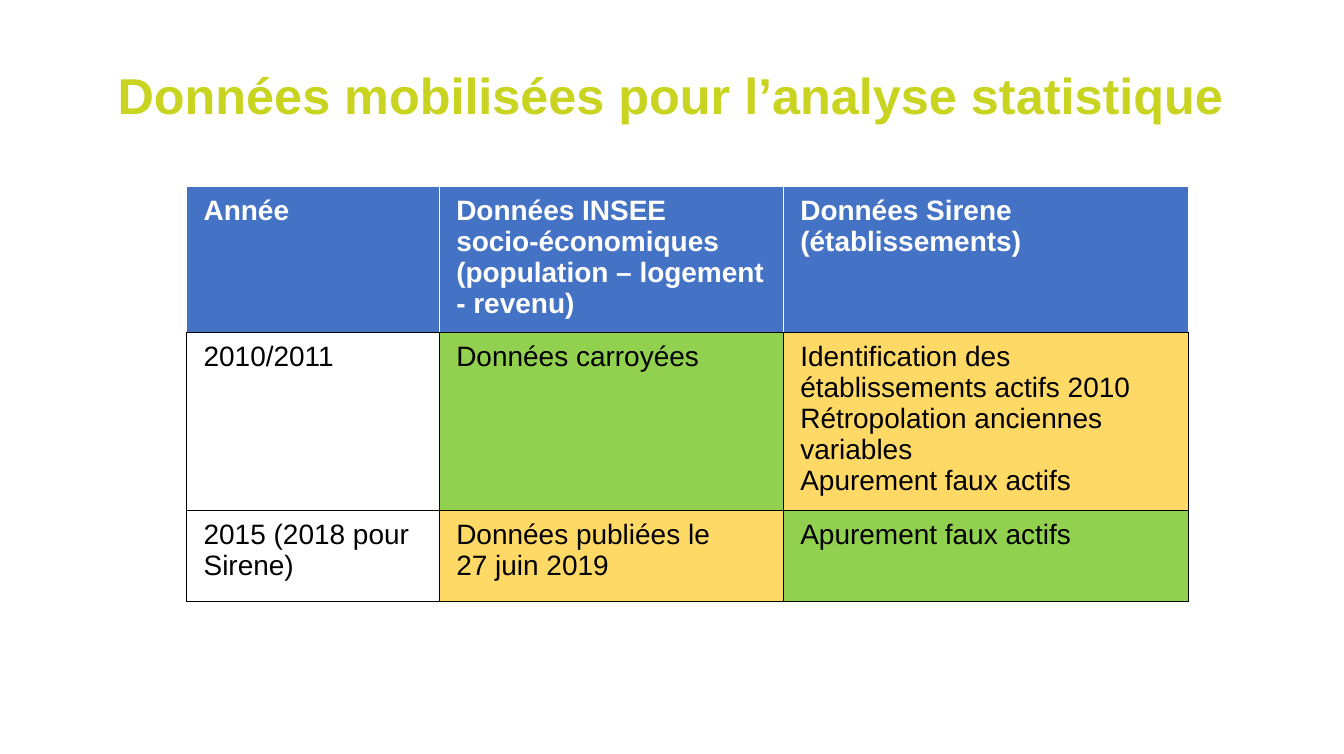
from typing import NamedTuple

from lxml import etree
from pptx import Presentation
from pptx import util as u
from pptx.dml.color import RGBColor
from pptx.enum import text
from pptx.oxml.ns import qn

LIME = RGBColor(0xC8, 0xD4, 0x1F)
BLUE = RGBColor(0x44, 0x72, 0xC4)
GREEN = RGBColor(0x92, 0xD0, 0x50)
YELLOW = RGBColor(0xFF, 0xD9, 0x66)
WHITE = RGBColor(0xFF, 0xFF, 0xFF)
BLACK = RGBColor(0, 0, 0)

FONT = "Arial"
SLIDE_WIDTH, SLIDE_HEIGHT = u.Inches(20), u.Inches(11.22)
TABLE_LEFT, TABLE_TOP = u.Inches(2.78), u.Inches(2.77)
COLUMN_WIDTHS = [u.Inches(width) for width in (3.76, 5.12, 6.03)]
ROW_HEIGHTS = [u.Inches(height) for height in (2.17, 2.65, 1.36)]


class Entry(NamedTuple):
    wording: str
    fill: RGBColor


ROWS = [
    [
        Entry("Année", BLUE),
        Entry("Données INSEE\nsocio-économiques\n(population – logement - revenu)", BLUE),
        Entry("Données Sirene (établissements)", BLUE),
    ],
    [
        Entry("2010/2011", WHITE),
        Entry("Données carroyées", GREEN),
        Entry(
            "Identification des établissements actifs 2010\n"
            "Rétropolation anciennes variables\n"
            "Apurement faux actifs",
            YELLOW,
        ),
    ],
    [
        Entry("2015 (2018 pour Sirene)", WHITE),
        Entry("Données publiées le\n27 juin 2019", YELLOW),
        Entry("Apurement faux actifs", GREEN),
    ],
]


def style_font(paragraph, size: float, color: RGBColor, bold: bool) -> None:
    font = paragraph.font
    font.name, font.size, font.bold = FONT, u.Pt(size), bold
    font.color.rgb = color


def add_border(cell, side: str, color: RGBColor) -> None:
    properties = cell._tc.get_or_add_tcPr()
    line = etree.SubElement(properties, qn(f"a:ln{side}"), w=str(u.Pt(1)))
    solid = etree.SubElement(line, qn("a:solidFill"))
    etree.SubElement(solid, qn("a:srgbClr"), val=str(color))


def fill_cell(cell, entry: Entry, is_header: bool) -> None:
    cell.margin_left = cell.margin_right = u.Inches(0.25)
    cell.margin_top = cell.margin_bottom = u.Inches(0.13)
    for side in "LRTB":
        add_border(cell, side, WHITE if is_header and side != "B" else BLACK)
    cell.fill.solid()
    cell.fill.fore_color.rgb = entry.fill
    cell.text_frame.text = entry.wording
    for paragraph in cell.text_frame.paragraphs:
        style_font(paragraph, 30, WHITE if is_header else BLACK, is_header)


def add_title(slide, wording: str) -> None:
    title = slide.shapes.title
    title.left, title.top = u.Inches(1.6), u.Inches(0.37)
    title.width, title.height = u.Inches(17.25), u.Inches(2.17)
    frame = title.text_frame
    frame.text = wording
    frame.word_wrap = True
    frame.auto_size = text.MSO_AUTO_SIZE.NONE
    frame.vertical_anchor = text.MSO_ANCHOR.MIDDLE
    frame.margin_left = frame.margin_right = u.Inches(0.15)
    frame.margin_top = frame.margin_bottom = u.Inches(0.07)
    paragraph = frame.paragraphs[0]
    paragraph.alignment = text.PP_ALIGN.LEFT
    paragraph.line_spacing = 0.9
    style_font(paragraph, 54, LIME, True)


def add_data_table(slide) -> None:
    table = slide.shapes.add_table(
        len(ROWS), len(COLUMN_WIDTHS), TABLE_LEFT, TABLE_TOP,
        sum(COLUMN_WIDTHS), sum(ROW_HEIGHTS),
    ).table
    table.horz_banding = False
    for column, width in zip(table.columns, COLUMN_WIDTHS):
        column.width = width
    for row, height in zip(table.rows, ROW_HEIGHTS):
        row.height = height
    for row_index, entries in enumerate(ROWS):
        for column_index, entry in enumerate(entries):
            fill_cell(table.cell(row_index, column_index), entry, row_index == 0)


def main() -> None:
    presentation = Presentation()
    presentation.slide_width, presentation.slide_height = SLIDE_WIDTH, SLIDE_HEIGHT
    slide = presentation.slides.add_slide(presentation.slide_layouts[5])
    add_title(slide, "Données mobilisées pour l’analyse statistique")
    add_data_table(slide)
    presentation.save("out.pptx")


if __name__ == "__main__":
    main()
